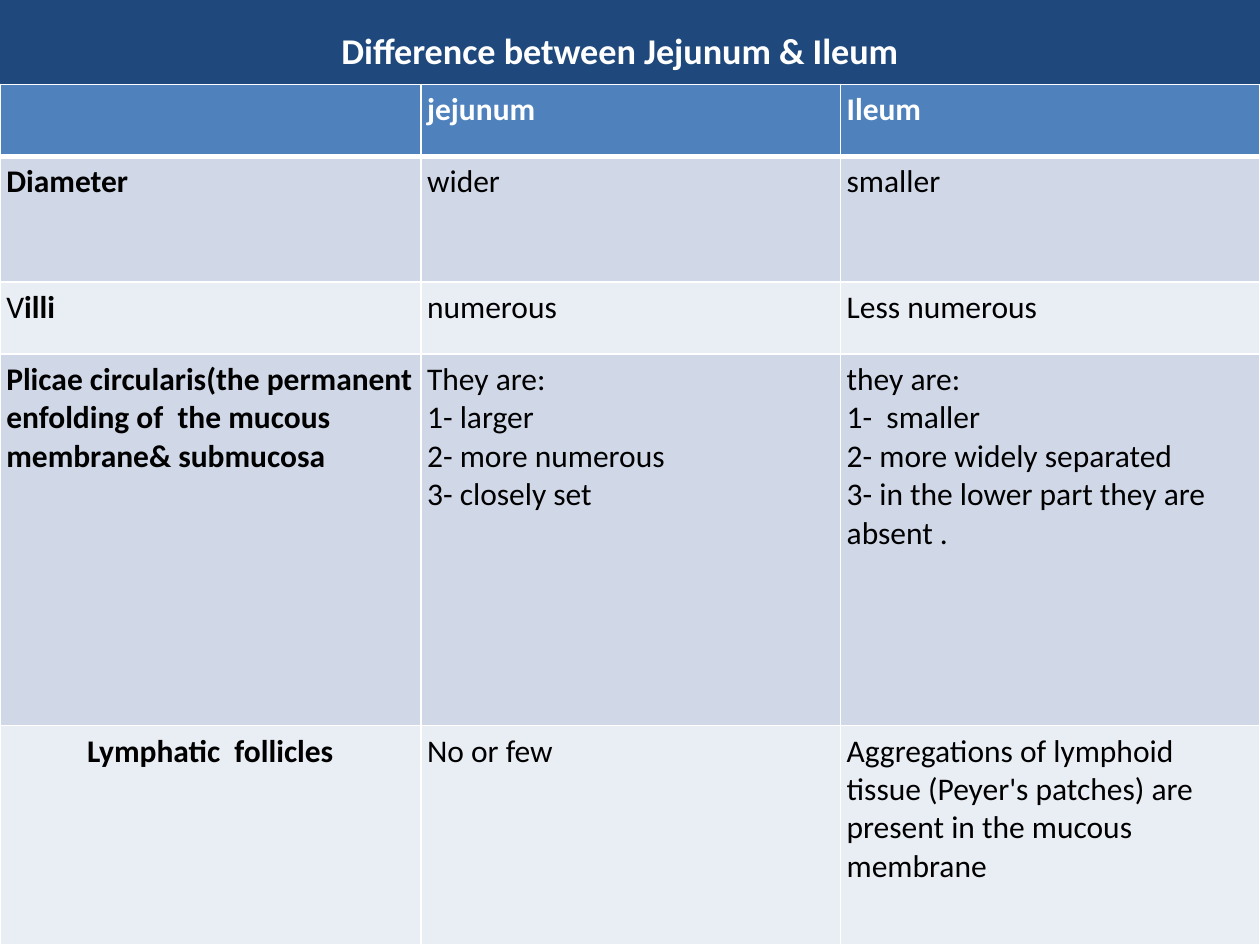
from lxml import etree
from pptx import Presentation
from pptx.dml.color import RGBColor
from pptx.enum.text import MSO_ANCHOR, PP_ALIGN
from pptx.oxml.ns import qn
from pptx.util import Inches, Pt


def style_span(span, size, color, bold):
    span.font.name = "Calibri"
    span.font.size = Pt(size)
    span.font.bold = bold
    span.font.color.rgb = RGBColor.from_string(color)


def add_border(cell, side, width):
    line = etree.SubElement(cell._tc.get_or_add_tcPr(), qn(f"a:{side}"), w=str(Pt(width)))
    fill = etree.SubElement(line, qn("a:solidFill"))
    etree.SubElement(fill, qn("a:srgbClr"), val="FFFFFF")


deck = Presentation()
deck.slide_width, deck.slide_height = Inches(10), Inches(7.5)
page = deck.slides.add_slide(deck.slide_layouts[5])
page.background.fill.solid()
page.background.fill.fore_color.rgb = RGBColor.from_string("1F497D")

# Title
title = page.shapes.title
title.left, title.top = Inches(0.42), Inches(0.17)
title.width, title.height = Inches(9), Inches(0.45)
frame = title.text_frame
frame.text = "Difference between Jejunum & Ileum"
frame.margin_left = frame.margin_right = frame.margin_top = frame.margin_bottom = 0
frame.vertical_anchor = MSO_ANCHOR.MIDDLE
frame.paragraphs[0].alignment = PP_ALIGN.CENTER
style_span(frame.paragraphs[0].runs[0], 20.7, "FFFFFF", True)

# Comparison table: each line of a cell is one paragraph
rows = [
    ["", "jejunum", "Ileum"],
    ["Diameter", "wider", "smaller"],
    ["Villi", "numerous", "Less numerous"],
    ["Plicae circularis(the permanent enfolding of  the mucous membrane& submucosa",
     "They are: \n1- larger\n2- more numerous\n3- closely set",
     "they are:\n1-  smaller\n2- more widely separated\n3- in the lower part they are absent ."],
    ["Lymphatic  follicles", "No or few",
     "Aggregations of lymphoid tissue (Peyer's patches) are present in the mucous membrane"],
]
row_heights = [0.57, 1, 0.57, 2.95, 1.74]
column_widths = [3.34, 3.33, 3.33]
row_fills = ["4F81BD", "D0D8E8", "E9EDF4", "D0D8E8", "E9EDF4"]

table = page.shapes.add_table(len(rows), len(column_widths), Inches(0), Inches(0.67),
                              Inches(10), Inches(6.83)).table
for column, width in zip(table.columns, column_widths):
    column.width = Inches(width)

for row_index, texts in enumerate(rows):
    table.rows[row_index].height = Inches(row_heights[row_index])
    for column_index, text in enumerate(texts):
        cell = table.cell(row_index, column_index)
        cell.margin_left = cell.margin_right = Inches(0.05)
        cell.margin_top = cell.margin_bottom = Inches(0.05)

        # Borders, with a thick rule under the header
        add_border(cell, "lnL", 1)
        add_border(cell, "lnR", 1)
        add_border(cell, "lnT", 3 if row_index == 1 else 1)
        add_border(cell, "lnB", 3 if row_index == 0 else 1)
        cell.fill.solid()
        cell.fill.fore_color.rgb = RGBColor.from_string(row_fills[row_index])

        # Text, bold in the header and the first column
        cell.text_frame.text = text
        color = "FFFFFF" if row_index == 0 else "000000"
        for para in cell.text_frame.paragraphs:
            para.alignment = PP_ALIGN.LEFT
            for span in para.runs:
                style_span(span, 18, color, row_index == 0 or column_index == 0)

# Only the V of "Villi" is regular
villi = table.cell(2, 0).text_frame.paragraphs[0]
villi.runs[0].text = "V"
villi.runs[0].font.bold = False
ending = villi.add_run()
ending.text = "illi"
style_span(ending, 18, "000000", True)

table.cell(4, 0).text_frame.paragraphs[0].alignment = PP_ALIGN.CENTER

deck.save("out.pptx")
